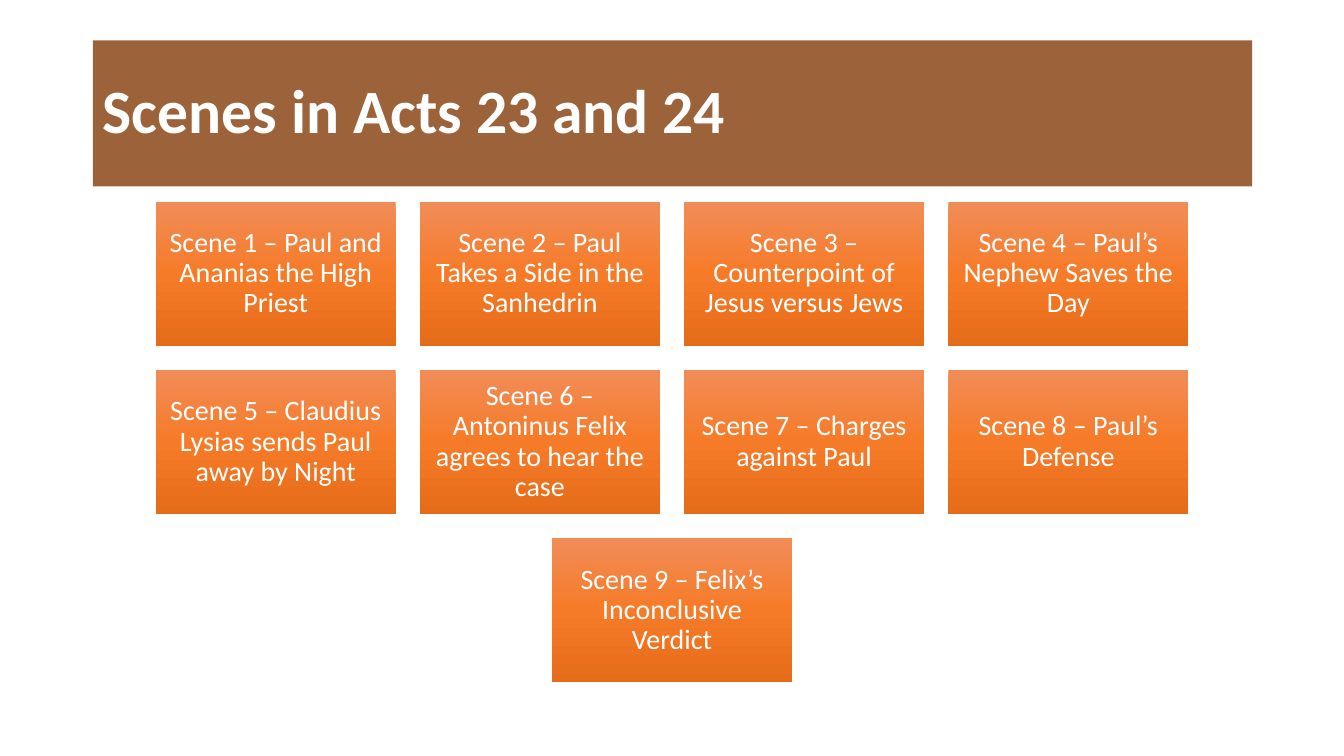
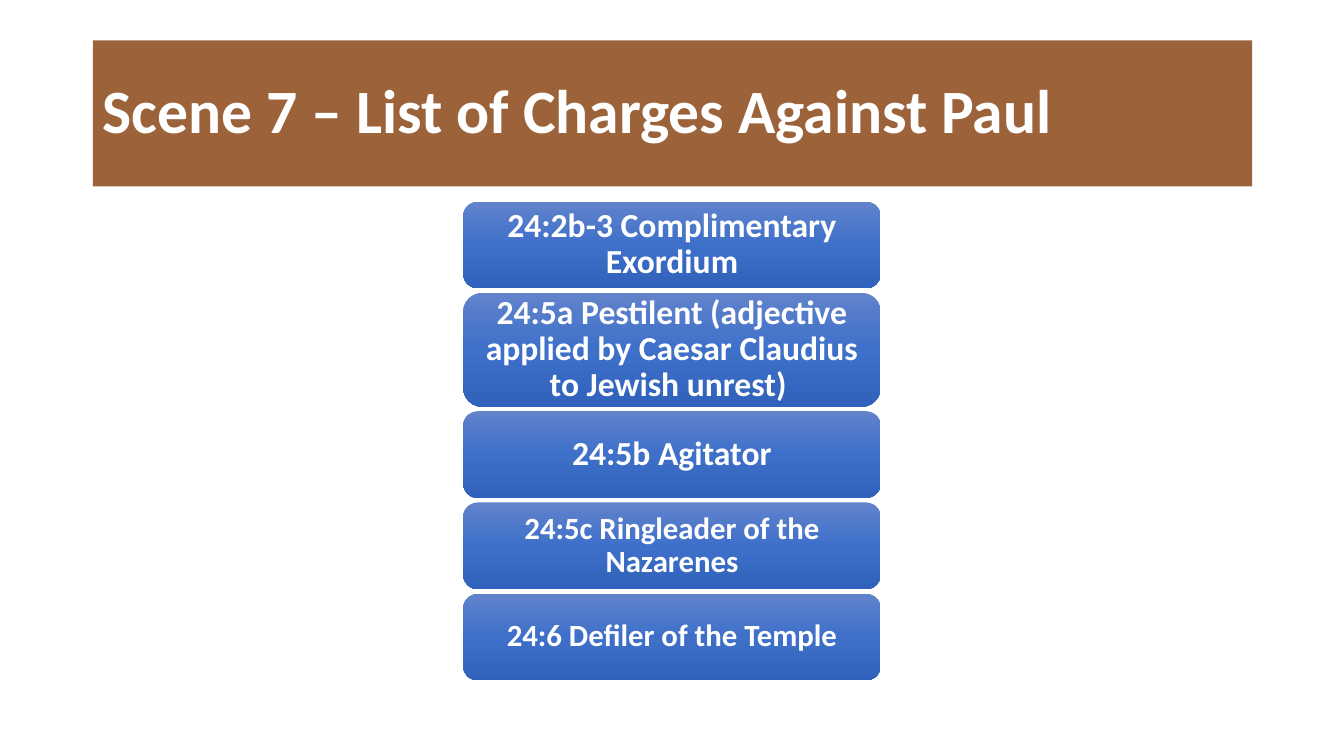
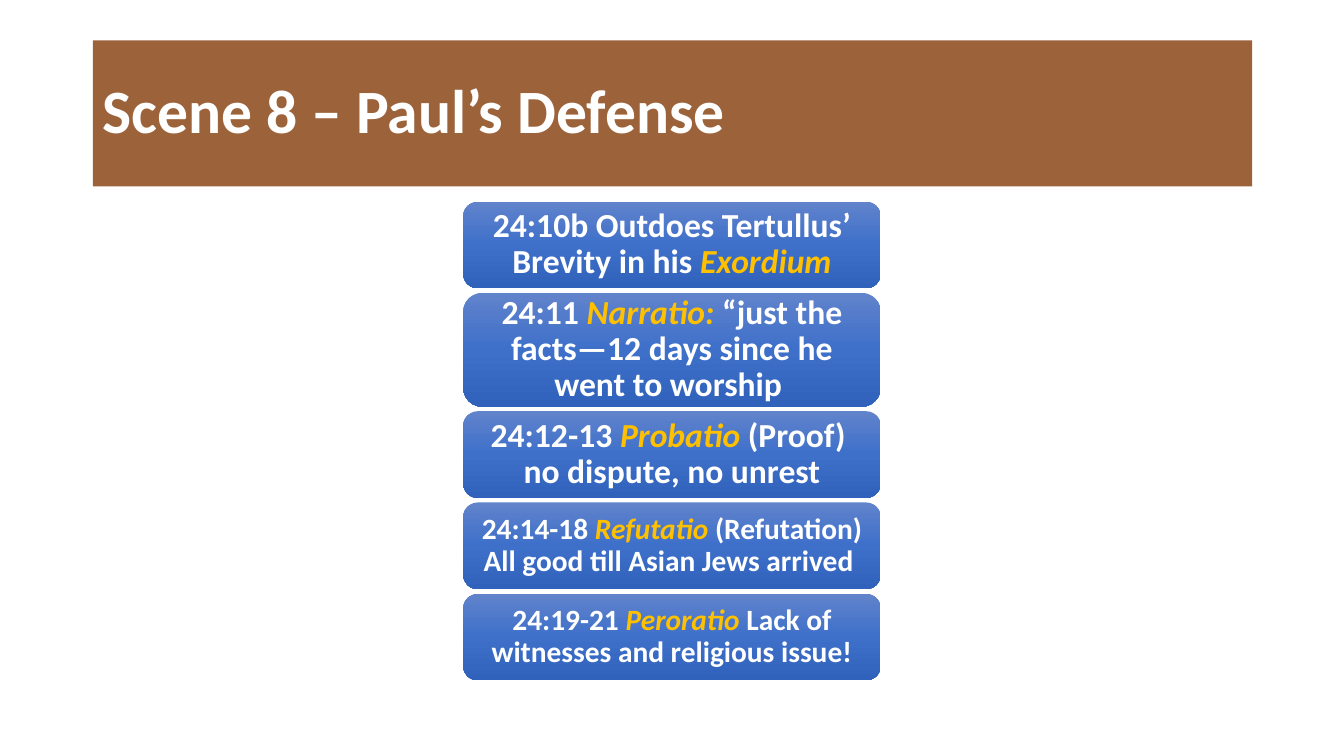
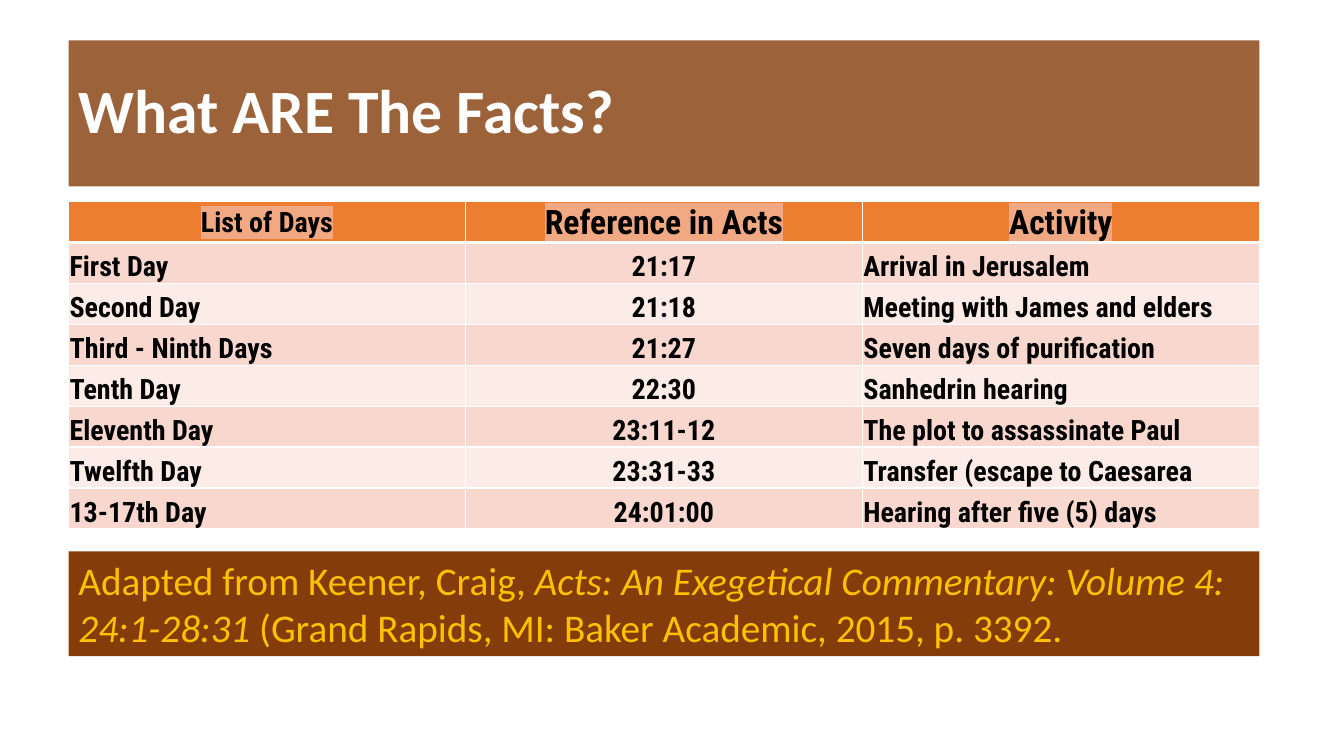
from copy import deepcopy

from lxml.etree import SubElement
from pptx import Presentation
from pptx.dml.color import RGBColor
from pptx.enum.shapes import MSO_SHAPE as Preset
from pptx.enum.text import MSO_ANCHOR as Anchor, MSO_AUTO_SIZE as AutoSize, PP_ALIGN as Align
from pptx.oxml.ns import qn
from pptx.util import Inches, Pt

WIDTH, HEIGHT = 13.33, 7.5
BODY_TOP = 2
WIDE, NARROW = (0.68, 11.81), (0.92, 11.5)
BROWN, GOLD, WHITE, BLACK = "843C0B", "FFC000", "FFFFFF", "000000"
ORANGES = ("F18C57", "F67B28", "E56C19")
BLUES = ("6183CB", "3E70CA", "3062BB")
HEADER_FILL, HIGHLIGHT, BANDS = "ED7D31", "F1A983", ("F8D7CE", "FCECE8")

SCENES = [
    ["Scene 1 – Paul and Ananias the High Priest", "Scene 2 – Paul Takes a Side in the Sanhedrin",
     "Scene 3 – Counterpoint of Jesus versus Jews", "Scene 4 – Paul’s Nephew Saves the Day"],
    ["Scene 5 – Claudius Lysias sends Paul away by Night",
     "Scene 6 – Antoninus Felix agrees to hear the case",
     "Scene 7 – Charges against Paul", "Scene 8 – Paul’s Defense"],
    ["Scene 9 – Felix’s Inconclusive Verdict"],
]
CHARGES = [
    ("24:2b-3 Complimentary Exordium", 24),
    ("24:5a Pestilent (adjective applied by Caesar Claudius to Jewish unrest) ", 24),
    ("24:5b Agitator", 24),
    ("24:5c Ringleader of the Nazarenes", 22),
    ("24:6 Defiler of the Temple", 22),
]
DEFENSE = [
    ("24:10b Outdoes Tertullus’ Brevity in his *Exordium*", 24),
    ("24:11 *Narratio: *“just the facts—12 days since he went to worship ", 24),
    ("24:12-13 *Probatio* (Proof) \nno dispute, no unrest", 24),
    ("24:14-18 *Refutatio* (Refutation) All good till Asian Jews arrived ", 21),
    ("24:19-21 *Peroratio* Lack of witnesses and religious issue!", 21),
]
DAYS = [
    ("List of Days", "Reference in Acts", "Activity"),
    ("First Day", "21:17", "Arrival in Jerusalem"),
    ("Second Day", "21:18", "Meeting with James and elders"),
    ("Third - Ninth Days", "21:27", "Seven days of purification"),
    ("Tenth Day", "22:30", "Sanhedrin hearing"),
    ("Eleventh Day", "23:11-12", "The plot to assassinate Paul"),
    ("Twelfth Day", "23:31-33", "Transfer (escape to Caesarea"),
    ("13-17th Day", "24:01:00", "Hearing after five (5) days"),
]
CITATION = ("Adapted from Keener, Craig, *Acts: An Exegetical Commentary: Volume 4: \n24:1-28:31*"
            " (Grand Rapids, MI: Baker Academic, 2015, p. 3392.")


def rgb(color):
    """Turn a hex string into a colour."""
    return RGBColor.from_string(color)


def set_all(target, **values):
    """Set several attributes of one object."""
    for name, value in values.items():
        setattr(target, name, value)


def fill_solid(target, color):
    """Give a shape or cell a plain fill."""
    target.fill.solid()
    target.fill.fore_color.rgb = rgb(color)


def fill_gradient(shape, colors):
    """Shade a shape from top to bottom through evenly spaced colours."""
    shape.fill.gradient()
    shape.fill.gradient_angle = 270
    stops = shape._element.spPr.find(".//" + qn("a:gsLst"))
    while len(stops) < len(colors):
        stops.append(deepcopy(stops[0]))
    for index, (stop, color) in enumerate(zip(shape.fill.gradient_stops, colors)):
        stop.position = index / (len(colors) - 1)
        stop.color.rgb = rgb(color)


def write(frame, text, size, color=WHITE, bold=False, face="Calibri", align=Align.LEFT, spacing=1.0):
    """Write one paragraph; text between asterisks is golden italic."""
    para = frame.paragraphs[0]
    set_all(para, alignment=align, line_spacing=spacing)
    for part_number, part in enumerate(text.split("*")):
        accent = part_number % 2 == 1
        for line_number, line in enumerate(part.split("\n")):
            if line_number:
                para.add_line_break()
            if line:
                span = para.add_run()
                span.text = line
                set_all(span.font, size=Pt(size), name=face, bold=bold, italic=accent)
                span.font.color.rgb = rgb(GOLD if accent else color)
    return para


def set_margins(target, horizontal, top, bottom):
    """Set the inner margins of a text frame or cell in inches."""
    set_all(target, margin_left=Inches(horizontal), margin_right=Inches(horizontal),
            margin_top=Inches(top), margin_bottom=Inches(bottom))


def add_page(deck, title, span=NARROW):
    """Add a slide with its title in the translucent brown band."""
    page = deck.slides.add_slide(deck.slide_layouts[5])
    band = page.shapes.title
    left, width = span
    set_all(band, left=Inches(left), top=Inches(0.4), width=Inches(width), height=Inches(1.45))
    fill_solid(band, BROWN)
    tint = band._element.spPr.find(".//" + qn("a:srgbClr"))
    SubElement(tint, qn("a:alpha"), val="80000")
    set_all(band.text_frame, word_wrap=True, auto_size=AutoSize.NONE, vertical_anchor=Anchor.MIDDLE)
    write(band.text_frame, title, 44, bold=True, spacing=0.9)
    return page


def add_tile(page, preset, place, colors, text, size, margins, bold=False):
    """Add one shaded tile with centred text."""
    box = page.shapes.add_shape(preset, *map(Inches, place))
    box.shadow.inherit = False
    box.line.fill.background()
    fill_gradient(box, colors)
    set_all(box.text_frame, word_wrap=True, vertical_anchor=Anchor.MIDDLE)
    set_margins(box.text_frame, *margins)
    write(box.text_frame, text, size, bold=bold, align=Align.CENTER, spacing=0.9)


def add_scene_grid(page, rows):
    """Lay out rows of scene tiles, each row centred on the slide."""
    width, height, gap = 2.38, 1.43, 0.24
    for row, scenes in enumerate(rows):
        left = (WIDTH - len(scenes) * (width + gap) + gap) / 2
        for column, scene in enumerate(scenes):
            place = (left + column * (width + gap), BODY_TOP + row * (height + gap), width, height)
            add_tile(page, Preset.RECTANGLE, place, ORANGES, scene, 20, (0.08, 0.08, 0.08))


def add_stack(page, items):
    """Stack rounded tiles, the second one taller than the rest."""
    width, gap, top = 4.14, 0.045, BODY_TOP
    for index, (text, size) in enumerate(items):
        height = 1.13 if index == 1 else 0.86
        place = ((WIDTH - width) / 2, top, width, height)
        add_tile(page, Preset.ROUNDED_RECTANGLE, place, BLUES, text, size, (0.09, 0.05, 0.05), bold=True)
        top += height + gap


def set_borders(cell, **points):
    """Draw white borders around a cell, with widths given by side."""
    properties = cell._tc.get_or_add_tcPr()
    for index, side in enumerate("LRTB"):
        border = SubElement(properties, qn("a:ln" + side), w=str(Pt(points.get(side, 1))))
        SubElement(SubElement(border, qn("a:solidFill")), qn("a:srgbClr"), val=WHITE)
        properties.insert(index, border)


def highlight(para, color):
    """Put a marker colour behind the text of a paragraph."""
    for span in para.runs:
        marker = SubElement(span._r.rPr, qn("a:highlight"))
        SubElement(marker, qn("a:srgbClr"), val=color)
        span._r.rPr.find(qn("a:solidFill")).addnext(marker)


def add_day_table(page, rows):
    """Add the table of days with a header row and banded body."""
    left, width = WIDE
    row_height = 0.406
    table = page.shapes.add_table(len(rows), len(rows[0]), Inches(left), Inches(BODY_TOP),
                                  Inches(width), Inches(row_height * len(rows))).table
    for row, texts in enumerate(rows):
        header = row == 0
        for column, text in enumerate(texts):
            cell = table.cell(row, column)
            corner = header and column == 0
            fill_solid(cell, HEADER_FILL if header else BANDS[(row - 1) % 2])
            set_borders(cell, T=3 if row == 1 else 1, B=3 if header else 1)
            set_margins(cell, 0.01, 0.01, 0)
            cell.vertical_anchor = Anchor.MIDDLE if corner else Anchor.BOTTOM
            para = write(cell.text_frame, text, 24 if header and not corner else 20, BLACK, True,
                         "Roboto Condensed", Align.CENTER if header or column == 1 else Align.LEFT)
            if header:
                highlight(para, HIGHLIGHT)


def add_citation(page, text):
    """Add the source line in a brown box below the table."""
    left, width = WIDE
    box = page.shapes.add_textbox(*map(Inches, (left, 5.47, width, 1.04)))
    fill_solid(box, BROWN)
    box.text_frame.word_wrap = True
    write(box.text_frame, text, 28, GOLD)


def main():
    """Build and save the deck."""
    deck = Presentation()
    set_all(deck, slide_width=Inches(WIDTH), slide_height=Inches(HEIGHT))
    add_scene_grid(add_page(deck, "Scenes in Acts 23 and 24"), SCENES)
    add_stack(add_page(deck, "Scene 7 – List of Charges Against Paul"), CHARGES)
    add_stack(add_page(deck, "Scene 8 – Paul’s Defense"), DEFENSE)
    facts = add_page(deck, "What ARE The Facts?", WIDE)
    add_day_table(facts, DAYS)
    add_citation(facts, CITATION)
    deck.save("out.pptx")


if __name__ == "__main__":
    main()
